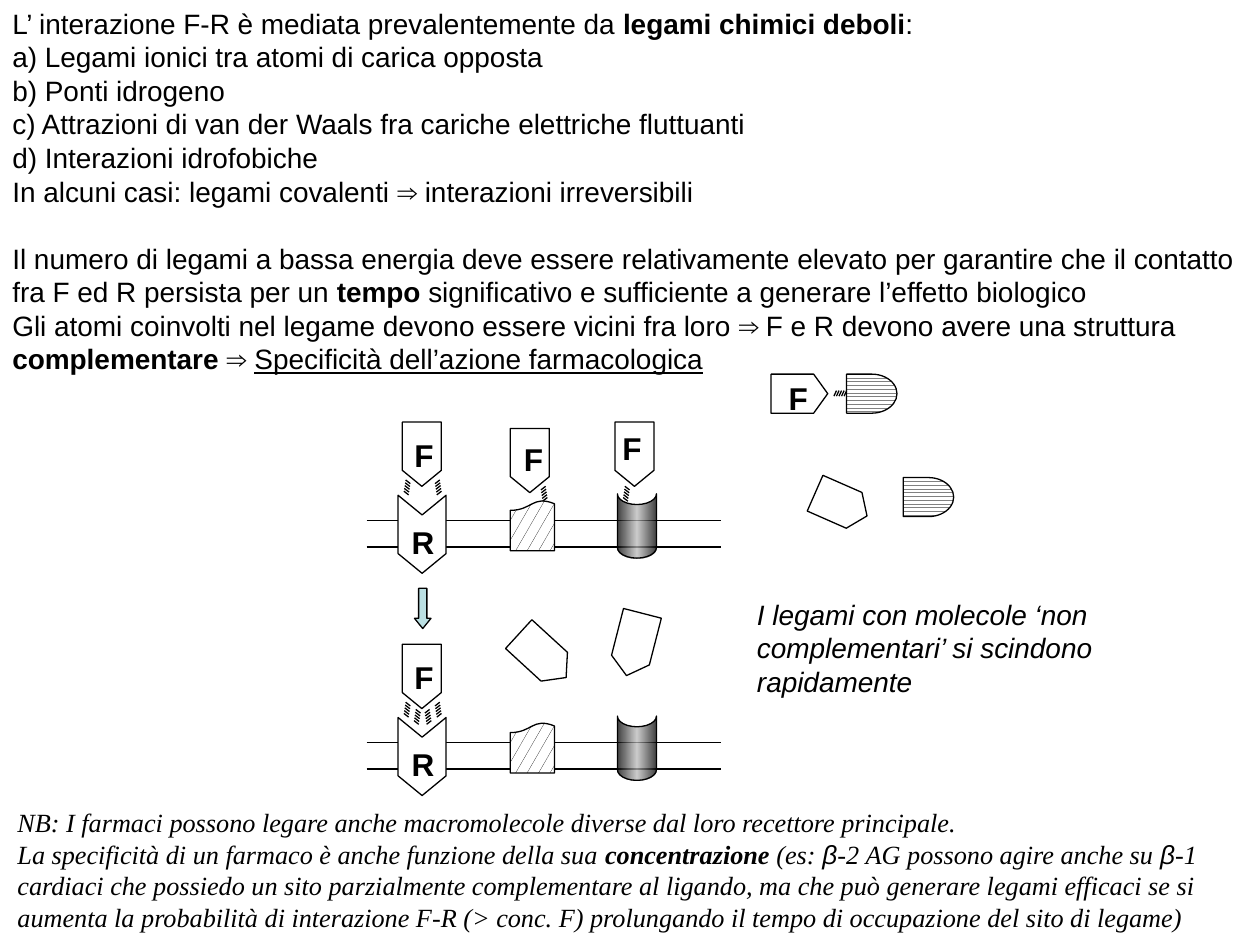
from lxml import etree
from pptx import Presentation
from pptx import util as u
from pptx.dml.color import RGBColor
from pptx.enum import dml, shapes, text
from pptx.oxml.ns import qn

Pt = u.Pt
S = shapes.MSO_SHAPE
COLORS = {"ink": "000000", "paper": "FFFFFF", "arrow": "BBE0E3",
          "hatch": "808080", "shine": "BBBBBB"}

# Text: a paragraph is (kind, runs), a run is (text, style letters)
# Styles: b bold, i italic, u underlined, A Arial
INTRO = [
    ("", [("L’ interazione F-R è mediata prevalentemente da ", ""),
          ("legami chimici deboli", "b"), (":", "")]),
    ("list", [(" Legami ionici tra atomi di carica opposta", "")]),
    ("list", [(" Ponti idrogeno", "")]),
    ("list", [(" Attrazioni di van der Waals fra cariche elettriche fluttuanti", "")]),
    ("list", [(" Interazioni idrofobiche", "")]),
    ("", [("In alcuni casi: legami covalenti ⇒ interazioni irreversibili", "")]),
    ("gap", [("Il numero di legami a bassa energia deve essere relativamente elevato "
              "per garantire che il contatto fra F ed R persista per un ", ""),
             ("tempo", "b"),
             (" significativo e sufficiente a generare l’effetto biologico", "")]),
    ("", [("Gli atomi coinvolti nel legame devono essere vicini fra loro ⇒ "
           "F e R devono avere una struttura ", ""),
          ("complementare ", "b"), ("⇒ ", ""),
          ("Specificità dell’azione farmacologica", "u")]),
]
REMARK = [("", [("I legami con molecole ‘non complementari’ si scindono rapidamente", "i")])]
NOTE = [
    ("", [("NB: I farmaci possono legare anche macromolecole diverse dal loro "
           "recettore principale.", "i")]),
    ("", [("La specificità di un farmaco è anche funzione della sua ", "i"),
          ("concentrazione", "bi"), (" (es: ", "i"), ("β", "iA"),
          ("-2 AG possono agire anche su ", "i"), ("β", "iA"),
          ("-1 cardiaci che possiedo un sito parzialmente complementare al ligando, "
           "ma che può generare legami efficaci se si aumenta la probabilità di "
           "interazione F-R (> conc. F) prolungando il tempo di occupazione del sito "
           "di legame)", "i")]),
]

# Diagram: two membrane rows, the second one ROW_GAP lower
ROW_GAP = 127
ROWS = (0, ROW_GAP)
MEMBRANE_X = (209.5, 411.8)
MEMBRANE_Y = (297.4, 312.5)
DRUG = (36.7, 22.3)
SIDE_DRUG = (32.4, 22.3)
DRUGS = [  # left, top, size, rotation, point
    (222.7, 248.4, DRUG, 90, 0.41), (222.7, 248.4 + ROW_GAP, DRUG, 90, 0.41),
    (284.4, 252, DRUG, 90, 0.41), (344.2, 248.4, DRUG, 90, 0.41),
    (291.6, 363.6, DRUG, 42.5, 0.41), (344.2, 357.1, DRUG, 104.4, 0.41),
    (440.6, 213.8, SIDE_DRUG, 0, 0.36), (464.4, 277.2, SIDE_DRUG, 23.7, 0.36),
]
SIDE_TARGETS = [(483.8, 213.8), (516.2, 272.9)]
LABELS = [("F", 229.7, 245.5), ("F", 229.7, 245.5 + ROW_GAP),
          ("F", 292.3, 247.7), ("F", 348.5, 241.9), ("F", 443.5, 213.1),
          ("R", 228.2, 295.2), ("R", 228.2, 295.2 + ROW_GAP)]

# Bonds: five short strokes each, as start, step and stroke vector
RIGHT = ((-0.25, 1.6), (2.7, 2.1))
LEFT = ((0.25, 1.6), (-2.7, 2.1))
FLAT = ((-1.45, 0), (-1.45, 3.2))
BONDS = [(231.8, 274.3, RIGHT), (251.3, 274.3, LEFT),
         (231.8, 274.3 + ROW_GAP, RIGHT), (251.3, 274.3 + ROW_GAP, LEFT),
         (237.6, 405.4, RIGHT), (245.5, 405.4, LEFT),
         (357.1, 277.9, RIGHT), (311.8, 277.9, LEFT), (483.8, 223.2, FLAT)]

prs = Presentation()
prs.slide_width, prs.slide_height = Pt(720), Pt(540)
sp_tree = prs.slides.add_slide(prs.slide_layouts[6]).shapes


def rgb(name):
    return RGBColor.from_string(COLORS[name])


def add_text(x, y, w, h, paras, size, font="Arial", wrap=True):
    tf = sp_tree.add_textbox(Pt(x), Pt(y), Pt(w), Pt(h)).text_frame
    tf.word_wrap = wrap
    tf.auto_size = text.MSO_AUTO_SIZE.NONE
    for i, (kind, runs) in enumerate(paras):
        p = tf.add_paragraph() if i else tf.paragraphs[0]
        p.line_spacing = Pt(size * 1.2)
        if kind == "gap":
            p.space_before = Pt(size * 1.2)
        if kind == "list":
            etree.SubElement(p._p.get_or_add_pPr(), qn("a:buFontTx"))
            etree.SubElement(p._p.pPr, qn("a:buAutoNum"), type="alphaLcParenR")
        for words, style in runs:
            r = p.add_run()
            r.text = words
            r.font.size = Pt(size)
            r.font.name = "Arial" if "A" in style else font
            r.font.color.rgb = rgb("ink")
            r.font.bold, r.font.italic, r.font.underline = (c in style for c in "biu")


def add_line(x1, y1, x2, y2):
    ln = sp_tree.add_connector(shapes.MSO_CONNECTOR.STRAIGHT,
                               Pt(x1), Pt(y1), Pt(x2), Pt(y2))
    ln.line.color.rgb = rgb("ink")
    ln.line.width = Pt(0.75)
    etree.SubElement(ln._element.spPr, qn("a:effectLst"))


def add_part(kind, x, y, w, h, rot=0, adj=(), fill="paper", pattern=None):
    sp = sp_tree.add_shape(kind, Pt(x), Pt(y), Pt(w), Pt(h))
    sp.shadow.inherit = False
    sp.rotation = rot
    for i, value in enumerate(adj):
        sp.adjustments[i] = value
    if pattern:
        sp.fill.patterned()
        sp.fill.pattern = pattern
        sp.fill.fore_color.rgb = rgb(fill)
        sp.fill.back_color.rgb = rgb("paper")
    else:
        sp.fill.solid()
        sp.fill.fore_color.rgb = rgb(fill)
    sp.line.color.rgb = rgb("ink")
    sp.line.width = Pt(0.75)
    return sp


def add_shine(sp):
    """Dark, light, dark translucent gradient that ignores the rotation."""
    grad = etree.Element(qn("a:gradFill"), rotWithShape="0")
    stops = etree.SubElement(grad, qn("a:gsLst"))
    for pos, color, alpha in ((0, "ink", 76), (50, "shine", 73), (100, "ink", 76)):
        gs = etree.SubElement(stops, qn("a:gs"), pos=str(pos * 1000))
        clr = etree.SubElement(gs, qn("a:srgbClr"), val=COLORS[color])
        etree.SubElement(clr, qn("a:alpha"), val=str(alpha * 1000))
    etree.SubElement(grad, qn("a:lin"), ang="0", scaled="1")
    solid = sp._element.spPr.find(qn("a:solidFill"))
    sp._element.spPr.replace(solid, grad)


# Text blocks
add_text(0, 0, 720, 220.3, INTRO, 16)
add_text(425.5, 337.7, 206.6, 65.5, REMARK, 16)
add_text(2.9, 457.2, 720, 79.9, NOTE, 15, "Times New Roman")

# Membranes with their three targets
for dy in ROWS:
    for y in MEMBRANE_Y:
        add_line(MEMBRANE_X[0], y + dy, MEMBRANE_X[1], y + dy)
    add_part(S.FLOWCHART_DOCUMENT, 291.6, 285.9 + dy, 25.2, 28.8, 180,
             fill="ink", pattern=dml.MSO_PATTERN.SMALL_CONFETTI)
    add_shine(add_part(S.FLOWCHART_STORED_DATA, 345.6, 289.4 + dy, 36.7, 22.3, 270))
    add_part(S.CHEVRON, 218.9, 291.6 + dy, 44.6, 27.4, 90, [0.41])

# Drugs, side targets and the arrow between the rows
for x, y, (w, h), rot, point in DRUGS:
    add_part(S.PENTAGON, x, y, w, h, rot, [point])
for x, y in SIDE_TARGETS:
    add_part(S.FLOWCHART_DELAY, x, y, 28.8, 22.3,
             fill="hatch", pattern=dml.MSO_PATTERN.ZIG_ZAG)
add_part(S.DOWN_ARROW, 236.9, 336.2, 9.4, 23, adj=[0.5, 0.62], fill="arrow")

# Bonds
for x, y, ((step_x, step_y), (dx, dy)) in BONDS:
    for i in range(5):
        x1, y1 = x + i * step_x, y + i * step_y
        add_line(x1, y1, x1 + dx, y1 + dy)

# Letters
for letter, x, y in LABELS:
    add_text(x, y, 27.4 if letter == "R" else 25.2, 28.8,
             [("", [(letter, "b")])], 18, wrap=False)

prs.save("out.pptx")
